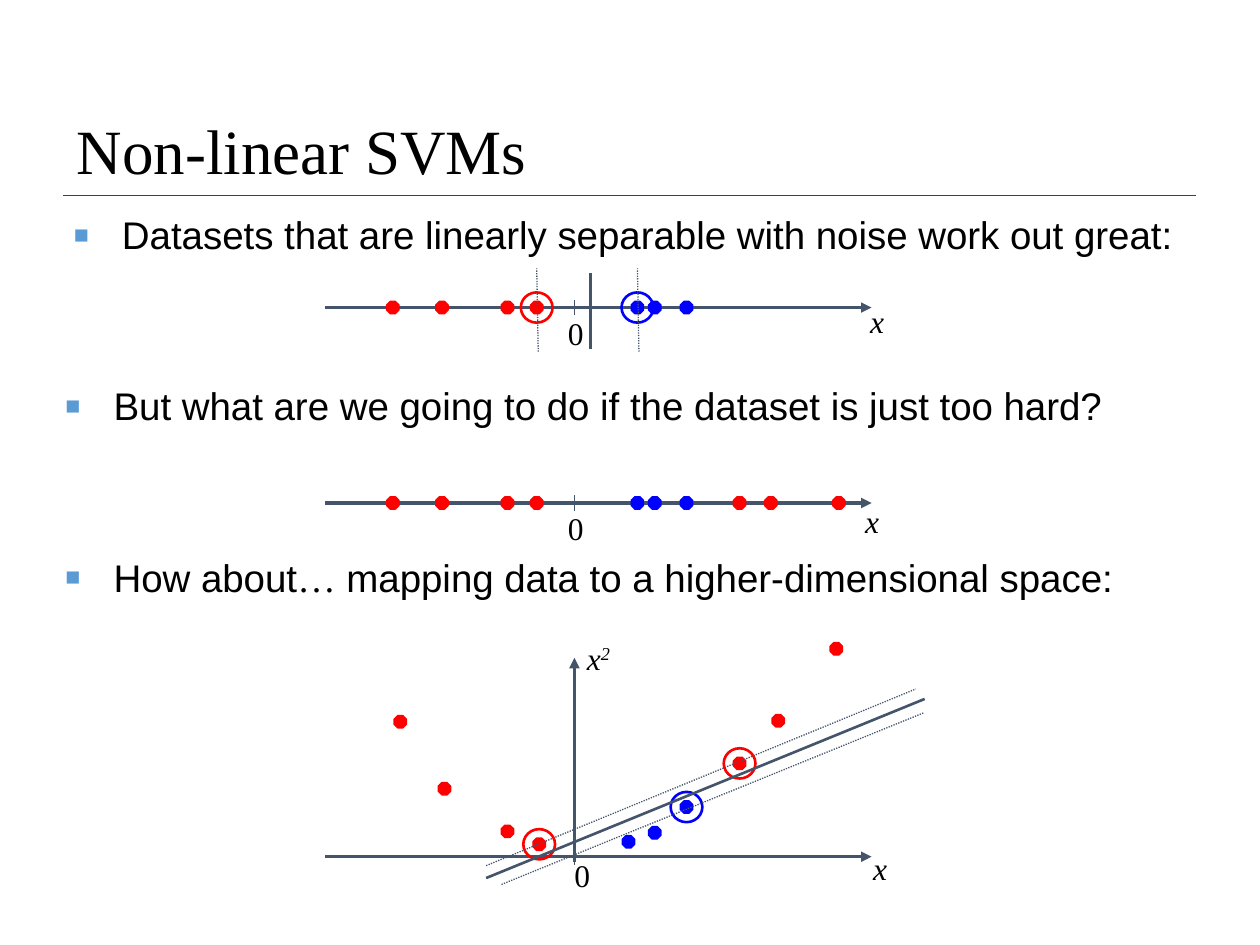
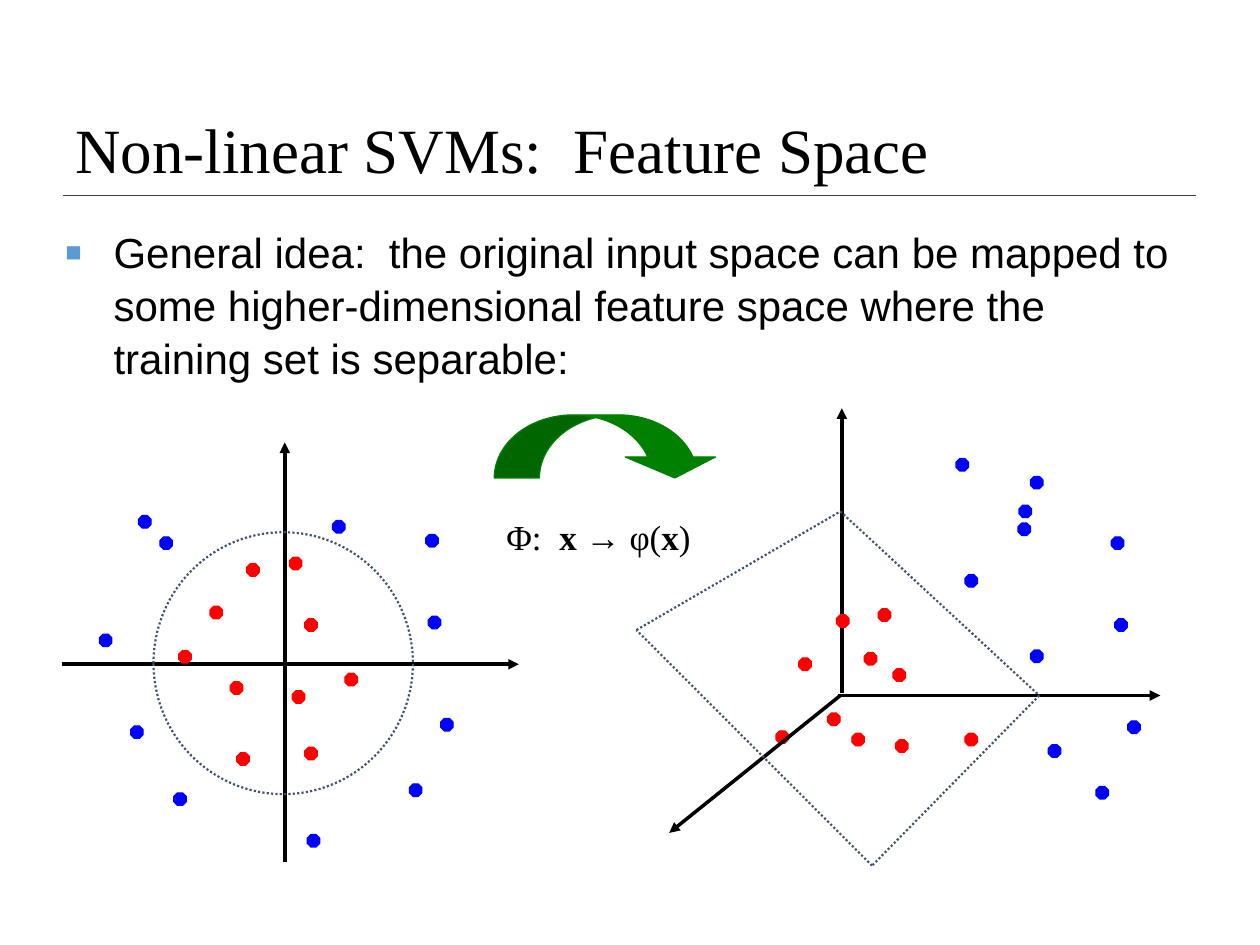
from lxml import etree
from pptx import Presentation
from pptx.dml.color import RGBColor
from pptx.enum.dml import MSO_LINE
from pptx.enum.shapes import MSO_CONNECTOR, MSO_SHAPE
from pptx.enum.text import MSO_ANCHOR
from pptx.oxml.ns import qn
from pptx.util import Cm, Pt

STRAIGHT = MSO_CONNECTOR.STRAIGHT
OCTAGON, ELLIPSE = MSO_SHAPE.OCTAGON, MSO_SHAPE.OVAL
CURVED_ARROW = MSO_SHAPE.CURVED_DOWN_ARROW
DOTTED = MSO_LINE.ROUND_DOT  # written as sysDot
MIDDLE, TOP = MSO_ANCHOR.MIDDLE, MSO_ANCHOR.TOP

COLORS = {
    "text": "000000",
    "rule": "404040",
    "axis": "44546A",
    "bullet": "5B9BD5",
    "red": "FF0000",
    "blue": "0000FF",
    "arrow": "008000",
}
SERIF, SANS = "Times New Roman", "Arial"
DOT = 0.25
RING = (0.64, 0.61)
HANGING = 0.97


def rgb(name):
    return RGBColor.from_string(COLORS[name])


class Region:
    """Draws in centimetres, measured from the corner of its box."""

    def __init__(self, slide, left, top):
        self.shapes, self.left, self.top = slide.shapes, left, top

    def at(self, x, y):
        return Cm(self.left + x), Cm(self.top + y)

    def line(self, start, end, color="axis", width=2.0, arrow=False, dotted=False):
        line = self.shapes.add_connector(STRAIGHT, *self.at(*start), *self.at(*end))
        line.line.color.rgb = rgb(color)
        line.line.width = Pt(width)
        if dotted:
            line.line.dash_style = DOTTED
        if arrow:
            etree.SubElement(line.line._get_or_add_ln(), qn("a:tailEnd"), type="triangle")
        etree.SubElement(line._element.spPr, qn("a:effectLst"))

    def centred(self, kind, center, size, color, fill=None, width=0.75):
        (x, y), (w, h) = center, size
        shape = self.shapes.add_shape(kind, *self.at(x - w / 2, y - h / 2), Cm(w), Cm(h))
        shape.shadow.inherit = False
        if fill:
            shape.fill.solid()
            shape.fill.fore_color.rgb = rgb(fill)
        else:
            shape.fill.background()
        shape.line.color.rgb = rgb(color)
        shape.line.width = Pt(width)
        return shape

    def dots(self, color, points):
        for point in points:
            self.centred(OCTAGON, point, (DOT, DOT), color, fill=color)

    def ring(self, color, point):
        self.centred(ELLIPSE, point, RING, color, width=1.5)

    def text(self, pos, size, runs, points, font=SERIF, anchor=TOP):
        """Each run is (text, options), options being italic, bold, font or raised."""
        box = self.shapes.add_textbox(*self.at(*pos), Cm(size[0]), Cm(size[1]))
        frame = box.text_frame
        frame.word_wrap = True
        frame.vertical_anchor = anchor
        paragraph = frame.paragraphs[0]
        for words, options in runs:
            run = paragraph.add_run()
            run.text = words
            run.font.size = Pt(points)
            run.font.name = options.get("font", font)
            run.font.color.rgb = rgb("text")
            run.font.bold = options.get("bold")
            run.font.italic = options.get("italic")
            if options.get("raised"):
                run.font._element.set("baseline", "30000")
        return paragraph

    def symbol(self, pos, letter, power=None, italic=True):
        runs = [(letter, {"italic": italic})]
        if power:
            runs.append((power, {"italic": italic, "raised": True}))
        self.text(pos, (1.27 if italic else 0.97, 1.02), runs, 18)


# Shared slide parts
def titled_slide(prs, title, left, top, width):
    slide = prs.slides.add_slide(prs.slide_layouts[6])
    page = Region(slide, 0, 0)
    page.line((1.27, 3.94), (24.1, 3.94), color="rule", width=1)
    page.text((left, top), (width, 1.65), [(title, {})], 36, anchor=MIDDLE)
    return slide


def bullet(slide, left, top, height, runs, points=22):
    paragraph = Region(slide, left, top).text((0, 0), (22.86, height), runs, points, SANS)
    paragraph.line_spacing = 1.05
    props = paragraph._p.get_or_add_pPr()
    props.set("marL", str(Cm(HANGING)))
    props.set("indent", str(-Cm(HANGING)))
    color = etree.SubElement(props, qn("a:buClr"))
    etree.SubElement(color, qn("a:srgbClr"), val=COLORS["bullet"])
    etree.SubElement(props, qn("a:buSzPct"), val="65000")
    etree.SubElement(props, qn("a:buFont"), typeface=SANS)
    etree.SubElement(props, qn("a:buChar"), char="■")


# Number lines and the lifted data
AXIS_LENGTH, ZERO = 11.02, 5.03
LEFT_REDS = [1.37, 2.36, 3.68, 4.27]
BLUES = [6.3, 6.65, 7.29]
RIGHT_REDS = [8.36, 8.99, 10.36]


def x_axis(region, zero_pos, x_pos):
    region.line((0, 0), (AXIS_LENGTH, 0), arrow=True)
    region.line((ZERO, -0.16), (ZERO, 0.16), width=0.75)
    region.symbol(zero_pos, "0", italic=False)
    region.symbol(x_pos, "x")


def number_line(slide, left, top, reds, x_pos):
    region = Region(slide, left, top)
    x_axis(region, (4.65, 0), x_pos)
    region.dots("red", [(x, 0) for x in reds])
    region.dots("blue", [(x, 0) for x in BLUES])
    return region


def separable_line(slide, left, top):
    region = number_line(slide, left, top, LEFT_REDS, (10.74, -0.23))
    region.line((5.36, -0.69), (5.36, 0.84), width=1.5)
    for color, x in (("red", LEFT_REDS[-1]), ("blue", BLUES[0])):
        region.ring(color, (x, 0))
        region.line((x + 0.03, 0.89), (x, -0.79), width=0.75, dotted=True)


def squared_plot(slide, left, top):
    region = Region(slide, left, top)
    x_axis(region, (4.78, -0.13), (10.8, -0.28))
    region.line((ZERO, 0.1), (ZERO, -4.01), arrow=True)
    region.symbol((ZERO, -4.52), "x", power="2")
    # Support vectors are ringed
    vectors = {"red": [(4.32, -0.25), (8.36, -1.88)], "blue": [(7.29, -1)]}
    others = {
        "red": [(1.52, -2.72), (2.41, -1.37), (3.68, -0.51), (9.14, -2.74), (10.31, -4.19)],
        "blue": [(6.12, -0.3), (6.65, -0.48)],
    }
    for color, points in vectors.items():
        region.dots(color, points + others[color])
        for point in points:
            region.ring(color, point)
    # Separator and its margins
    region.line((3.25, 0.43), (12.09, -3.18), width=1.5)
    region.line((3.25, 0.18), (11.91, -3.38), width=0.75, dotted=True)
    region.line((3.56, 0.56), (12.07, -2.9), width=0.75, dotted=True)


# Feature space regions
def input_space(slide, left, top):
    region = Region(slide, left, top)
    region.line((4.5, 8.46), (4.5, 0), color="text", arrow=True)
    region.line((0, 4.47), (9.22, 4.47), color="text", arrow=True)
    region.dots("red", [
        (4.72, 2.44), (3.12, 3.43), (3.53, 4.95), (5.03, 6.27), (3.86, 2.57),
        (2.49, 4.32), (3.66, 6.38), (5.03, 3.68), (5.84, 4.78), (4.78, 5.13)])
    region.dots("blue", [
        (7.52, 3.63), (7.14, 7.01), (0.89, 3.99), (5.08, 8.03), (7.77, 5.69), (2.39, 7.19),
        (1.52, 5.84), (1.68, 1.6), (5.59, 1.7), (2.11, 2.03), (7.47, 1.98)])
    boundary = region.centred(ELLIPSE, (4.47, 4.45), (5.23, 5.28), "axis", width=1.25)
    boundary.line.dash_style = DOTTED


def feature_space(slide, left, top):
    region = Region(slide, left, top)
    region.line((4.17, 5.74), (4.17, 0), color="text", arrow=True)
    region.line((4.09, 5.79), (10.59, 5.79), color="text", arrow=True)
    region.dots("red", [
        (5.03, 4.17), (3.43, 5.16), (4.5, 6.68), (6.78, 6.68), (4.19, 4.29),
        (4.75, 5.05), (5.38, 6.81), (5.33, 5.38), (4.01, 6.27), (2.97, 6.63)])
    region.dots("blue", [
        (9.8, 4.37), (9.42, 7.75), (8.1, 1.5), (8.1, 5), (10.06, 6.43), (6.78, 3.48),
        (8.46, 6.91), (7.87, 2.08), (7.85, 2.44), (6.6, 1.14), (9.73, 2.72)])
    region.line((4.14, 5.79), (0.69, 8.56), color="text", arrow=True)
    # Separating plane
    corners = [(4.14, 2.08), (8.15, 5.79), (4.78, 9.22), (0.03, 4.47)]
    for start, end in zip(corners, corners[1:] + corners[:1]):
        region.line(start, end, width=1.25, dotted=True)


def mapping(slide, left, top):
    region = Region(slide, left, top)
    arrow = region.centred(CURVED_ARROW, (2.28, 0.64), (4.55, 1.27), "arrow", fill="arrow")
    for index, value in enumerate((0.717, 1.433, 0.333)):
        arrow.adjustments[index] = value
    bold = {"bold": True}
    region.text((0, 1.9), (5.28, 1.09),
                [("Φ:  ", {}), ("x → ", bold), ("φ(", {}), ("x", bold), (")", {})], 20)


# Slides
def nonlinear_slide(prs):
    slide = titled_slide(prs, "Non-linear SVMs", 1.3, 2.18, 21.08)
    bullet(slide, 1.24, 4.09, 1.47,
           [("Datasets that are linearly separable with noise work out great:", {})])
    separable_line(slide, 6.55, 6.2)
    bullet(slide, 1.07, 7.54, 1.7,
           [("But what are we going to do if the dataset is just too hard?", {})])
    number_line(slide, 6.55, 10.14, LEFT_REDS + RIGHT_REDS, (10.64, -0.15))
    bullet(slide, 1.07, 11, 1.27,
           [("How about", {}), ("…", {"font": SERIF}),
            (" mapping data to a higher-dimensional space:", {})])
    squared_plot(slide, 6.55, 17.27)


def feature_space_slide(prs):
    slide = titled_slide(prs, "Non-linear SVMs:  Feature Space", 1.27, 2.17, 21.59)
    bullet(slide, 1.07, 4.39, 12.55,
           [("General idea:  the original input space can be mapped to some "
             "higher-dimensional feature space where the training set is separable:", {})], 24)
    input_space(slide, 1.24, 8.92)
    feature_space(slide, 12.8, 8.23)
    mapping(slide, 9.96, 8.36)


def main():
    prs = Presentation()
    prs.slide_width, prs.slide_height = Cm(25.4), Cm(19.05)
    nonlinear_slide(prs)
    feature_space_slide(prs)
    prs.save("out.pptx")


if __name__ == "__main__":
    main()
